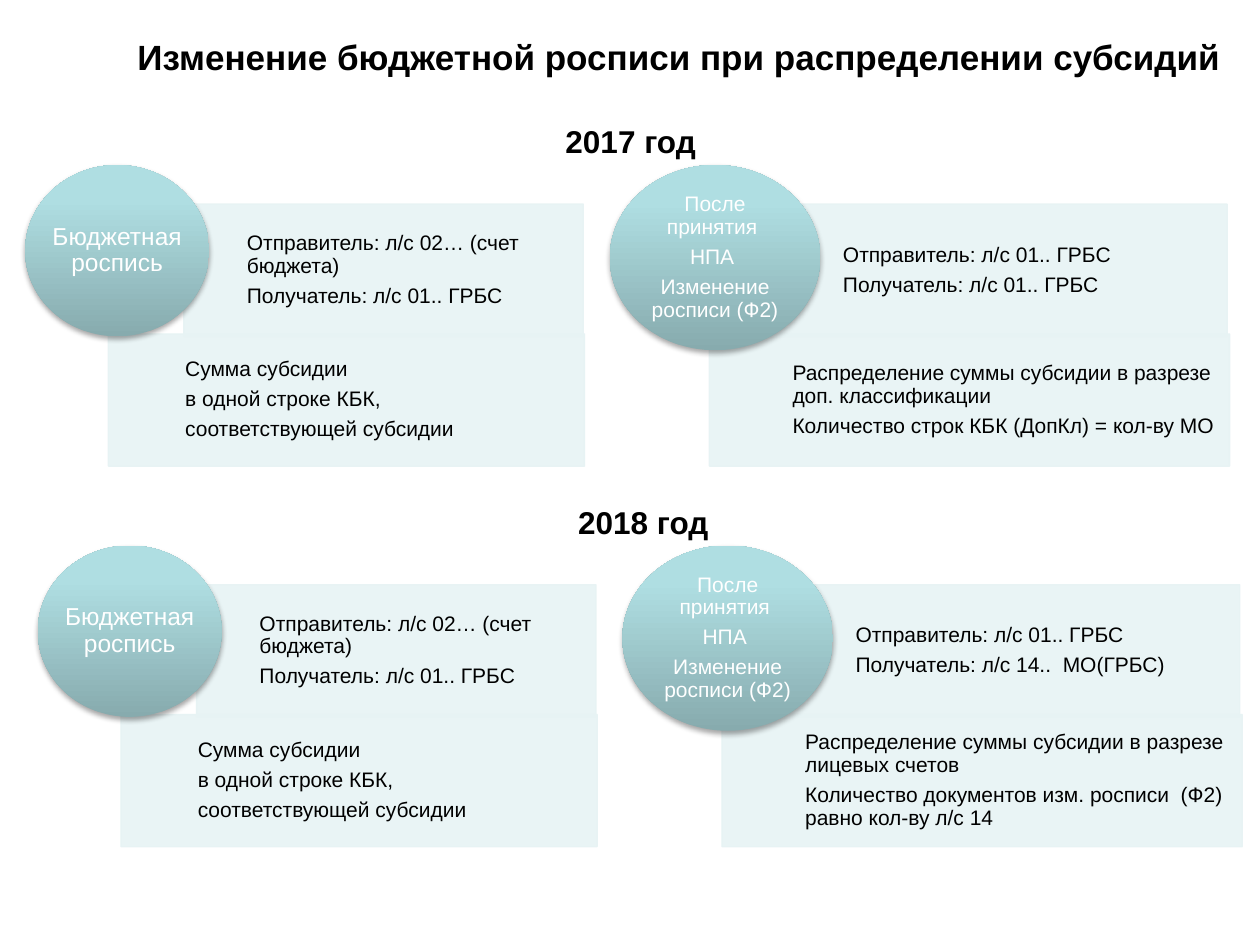
from pptx import Presentation
from pptx.dml.color import RGBColor
from pptx.enum.shapes import MSO_SHAPE as Shape
from pptx.enum.text import MSO_ANCHOR as Anchor, PP_ALIGN as Align
from pptx.oxml import parse_xml
from pptx.oxml.ns import nsdecls
from pptx.util import Inches, Pt
from lxml.etree import SubElement

PANEL, BLACK, WHITE = "E7F3F4", "000000", "FFFFFF"
CIRCLE_STOPS = [(0, "87ABAE"), (80, "AFDEE2"), (100, "AFE0E4")]
PANEL_TOP, PANEL_STEP, PANEL_HEIGHT = 0.31, 1.03, 1.05
PANEL_MARGINS = (0, 0.09, 0.09, 0.09)
CIRCLE_INSET = 0.146  # share of a circle's box outside its inscribed rectangle

# Geometry of the clusters: circle size, then (left, width, text indent) of each panel
LEFT_CLUSTER = {"left": 0, "circle": (1.46, 1.36), "size": 14,
                "panels": [(1.26, 3.17, 0.5), (0.66, 3.78, 0.61)]}
RIGHT_CLUSTER = {"left": 4.64, "circle": (1.67, 1.47), "size": 12,
                 "panels": [(1.26, 3.64, 0.59), (0.79, 4.13, 0.66)]}

# Wording
BUDGET = (["Бюджетная роспись"],
          ["Отправитель: л/с 02… (счет бюджета)", "Получатель: л/с 01.. ГРБС"],
          ["Сумма субсидии", "в одной строке КБК,", "соответствующей субсидии"])
AFTER_ACT = ["После принятия ", "НПА ", "Изменение росписи (Ф2)"]
YEARS = [
    ("2017 год", (0.2, 0.92), BUDGET, (
        AFTER_ACT,
        ["Отправитель: л/с 01.. ГРБС", "Получатель: л/с 01.. ГРБС"],
        ["Распределение суммы субсидии в разрезе доп. классификации",
         "Количество строк КБК (ДопКл) = кол-ву МО"])),
    ("2018 год", (0.3, 3.94), BUDGET, (
        AFTER_ACT,
        ["Отправитель: л/с 01.. ГРБС", "Получатель: л/с 14..  МО(ГРБС)"],
        ["Распределение суммы субсидии в разрезе лицевых счетов",
         "Количество документов изм. росписи  (Ф2) равно кол-ву л/с 14"])),
]


def rgb(value):
    return RGBColor.from_string(value)


def set_all(target, values):
    for name, value in values.items():
        setattr(target, name, value)


def add_text(shapes, box, lines, size, color=BLACK, bold=False, align=Align.LEFT,
             anchor=Anchor.MIDDLE, margins=(0.1, 0.05, 0.1, 0.05), spacing=None):
    frame = shapes.add_textbox(*map(Inches, box)).text_frame
    sides = ("margin_left", "margin_top", "margin_right", "margin_bottom")
    set_all(frame, {"word_wrap": True, "vertical_anchor": anchor,
                    **dict(zip(sides, map(Inches, margins)))})
    frame.text = "\n".join(lines)
    for paragraph in frame.paragraphs:
        paragraph.alignment = align
        if spacing:
            set_all(paragraph, {"line_spacing": spacing, "space_after": Pt(size * 0.35)})
        set_all(paragraph.font, {"name": "Arial", "size": Pt(size), "bold": bold})
        paragraph.font.color.rgb = rgb(color)


def add_panel(shapes, box, indent, lines):
    left, top, width, height = box
    panel = shapes.add_shape(Shape.RECTANGLE, *map(Inches, box))
    panel.shadow.inherit = False
    panel.line.width = Pt(0.75)
    for fill in (panel.fill, panel.line.fill):
        fill.solid()
        fill.fore_color.rgb = rgb(PANEL)
    for color in panel.element.spPr.xpath(".//a:srgbClr"):
        SubElement(color, color.tag.replace("srgbClr", "alpha"), val="90000")
    add_text(shapes, (left + indent, top, width - indent, height), lines, 12,
             margins=PANEL_MARGINS, spacing=0.9)


def add_circle(shapes, box, lines, size):
    left, top, width, height = box
    circle = shapes.add_shape(Shape.OVAL, *map(Inches, box))
    circle.line.fill.background()
    circle.shadow.inherit = False
    # Vertical gradient, darkest at the bottom
    stops = "".join(f'<a:gs pos="{at * 1000}"><a:srgbClr val="{color}"/></a:gs>'
                    for at, color in CIRCLE_STOPS)
    properties = circle.element.spPr
    properties.xpath("./a:prstGeom")[0].addnext(parse_xml(
        f'<a:gradFill {nsdecls("a")} rotWithShape="1"><a:gsLst>{stops}</a:gsLst>'
        '<a:lin ang="16200000" scaled="0"/></a:gradFill>'))
    # Soft shadow below
    properties.xpath("./a:effectLst")[0].append(parse_xml(
        f'<a:outerShdw {nsdecls("a")} blurRad="{Pt(3.1)}" dist="{Pt(1.8)}" dir="5400000" '
        f'rotWithShape="0"><a:srgbClr val="{BLACK}"><a:alpha val="35000"/></a:srgbClr>'
        '</a:outerShdw>'))
    inset_x, inset_y = width * CIRCLE_INSET, height * CIRCLE_INSET
    add_text(shapes, (left + inset_x, top + inset_y, width - 2 * inset_x, height - 2 * inset_y),
             lines, size, WHITE, align=Align.CENTER, margins=(0, 0, 0, 0), spacing=0.9)


def add_cluster(shapes, left, top, layout, wording):
    circle_lines, *panel_lines = wording
    for row, ((offset, width, indent), lines) in enumerate(zip(layout["panels"], panel_lines)):
        box = (left + offset, top + PANEL_TOP + row * PANEL_STEP, width, PANEL_HEIGHT)
        add_panel(shapes, box, indent, lines)
    add_circle(shapes, (left, top, *layout["circle"]), circle_lines, layout["size"])


def add_year(slide, corner, heading, wordings):
    left, top = corner
    shapes = slide.shapes.add_group_shape().shapes
    for layout, wording in zip((LEFT_CLUSTER, RIGHT_CLUSTER), wordings):
        add_cluster(shapes, left + layout["left"], top + 0.39, layout, wording)
    add_text(slide.shapes, (left + 0.08, top, 9.45, 0.4), [heading], 18, bold=True,
             align=Align.CENTER, anchor=Anchor.TOP)


def main():
    deck = Presentation()
    set_all(deck, {"slide_width": Inches(10), "slide_height": Inches(7.5)})
    slide = deck.slides.add_slide(deck.slide_layouts[6])
    # Title
    add_text(slide.shapes, (0.98, 0.13, 8.82, 0.63),
             ["Изменение бюджетной росписи при распределении субсидий"], 20,
             bold=True, align=Align.CENTER)
    # One block for each year
    for heading, corner, *wordings in YEARS:
        add_year(slide, corner, heading, wordings)
    deck.save("out.pptx")


if __name__ == "__main__":
    main()
